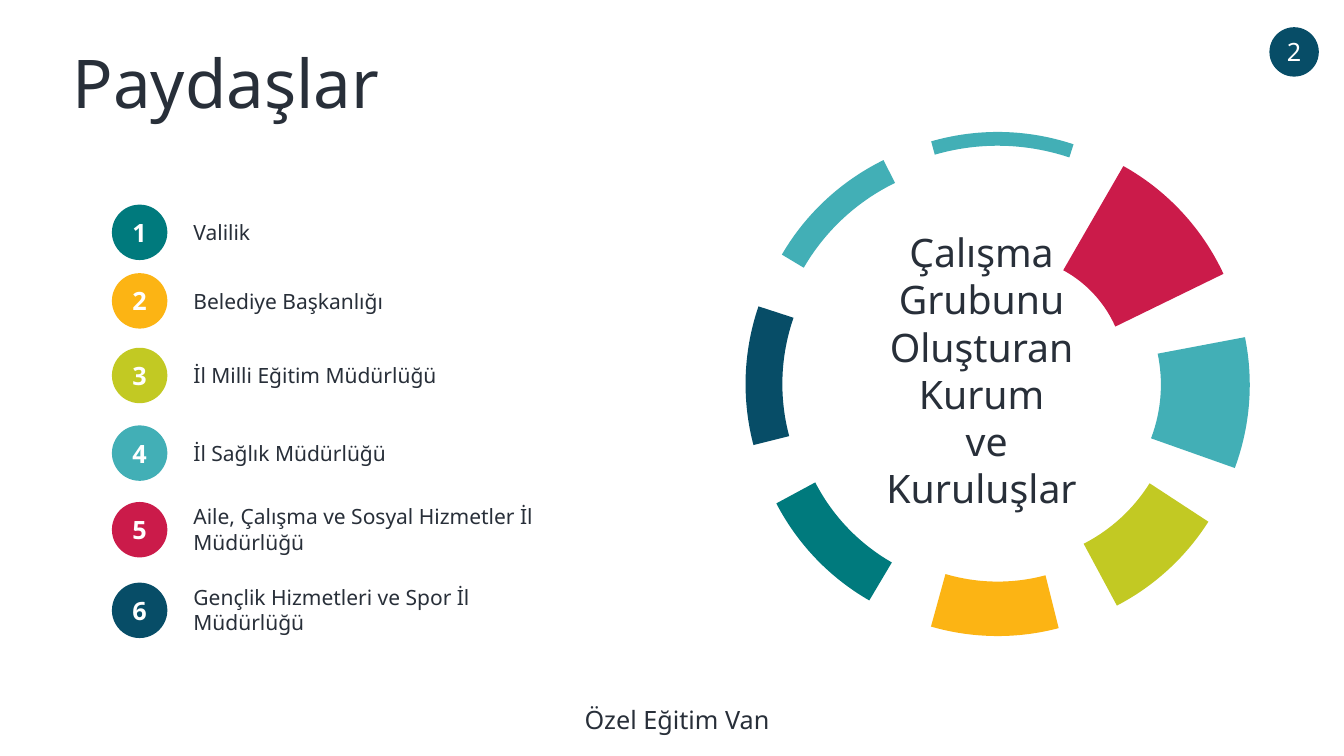
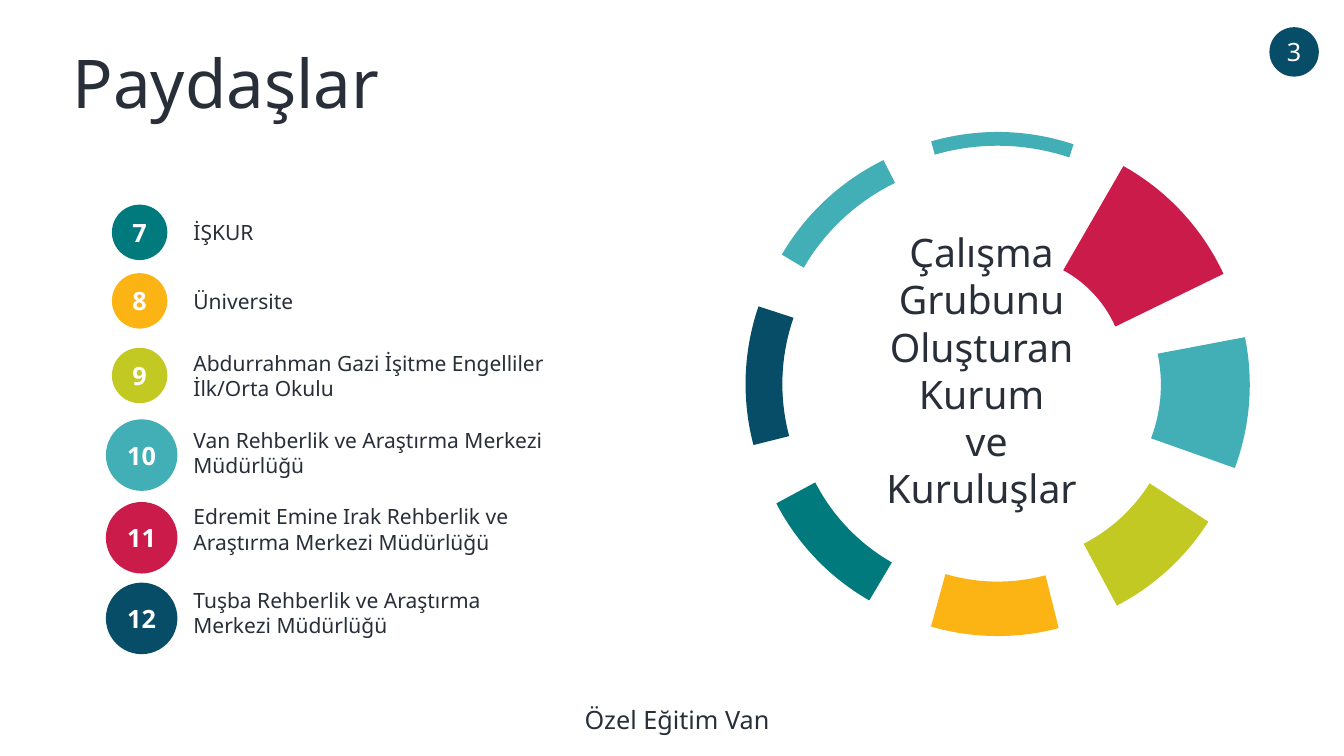
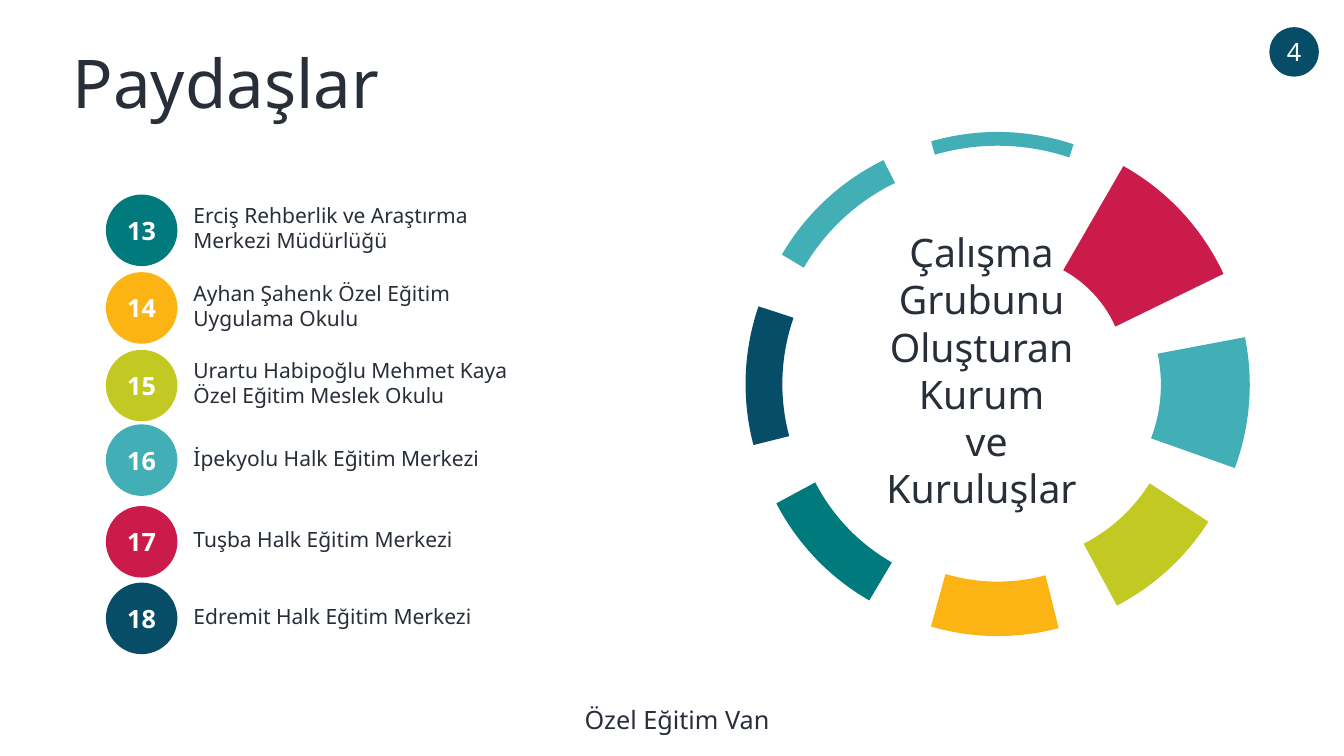
from pptx import Presentation
from pptx.dml.color import RGBColor
from pptx.enum import shapes, text
from pptx.util import Inches, Pt

FONT = "Noto Sans"
INK = RGBColor(0x28, 0x2F, 0x39)
WHITE = RGBColor(0xFF, 0xFF, 0xFF)
NAVY = RGBColor(0x07, 0x4D, 0x67)
TEAL = RGBColor(0x00, 0x7A, 0x7D)
AMBER = RGBColor(0xFC, 0xB4, 0x14)
LIME = RGBColor(0xC2, 0xC9, 0x23)
AQUA = RGBColor(0x42, 0xAF, 0xB6)
CRIMSON = RGBColor(0xCB, 0x1B, 0x4A)
ROW_COLORS = [TEAL, AMBER, LIME, AQUA, CRIMSON, NAVY]

TITLE = "Paydaşlar"
FOOTER = "Özel Eğitim Van"
RING_TEXT = "Çalışma Grubunu Oluşturan Kurum\n ve Kuruluşlar"

# Ring segments: rotation, start angle, end angle (degrees), thickness, colour
SEGMENTS = [
    (0, 254.69, 287.57, 0.028, AQUA),
    (315, 255.97, 287.99, 0.052, AQUA),
    (270, 255.97, 288, 0.075, NAVY),
    (224.7, 255.97, 286.96, 0.09, TEAL),
    (180, 255.97, 285.37, 0.111, AMBER),
    (137.2, 255.97, 284.53, 0.143, LIME),
    (93.3, 255.97, 286.22, 0.181, AQUA),
    (44, 255.97, 289.99, 0.245, CRIMSON),
]
ANGLE_UNIT = 0.6  # one degree, as an adjustment value

# Stakeholders on each slide: badge top, label top, label
STAKEHOLDERS = [
    [
        (2.03, 2.13, "Valilik"),
        (2.71, 2.81, "Belediye Başkanlığı"),
        (3.45, 3.55, "İl Milli Eğitim Müdürlüğü"),
        (4.22, 4.32, "İl Sağlık Müdürlüğü"),
        (4.98, 4.95, "Aile, Çalışma ve Sosyal Hizmetler İl Müdürlüğü"),
        (5.78, 5.75, "Gençlik Hizmetleri ve Spor İl Müdürlüğü"),
    ],
    [
        (2.03, 2.13, "İŞKUR"),
        (2.71, 2.81, "Üniversite"),
        (3.45, 3.43, "Abdurrahman Gazi İşitme Engelliler İlk/Orta Okulu"),
        (4.16, 4.19, "Van Rehberlik ve Araştırma Merkezi Müdürlüğü"),
        (4.98, 4.95, "Edremit Emine Irak Rehberlik ve Araştırma Merkezi Müdürlüğü"),
        (5.78, 5.78, "Tuşba Rehberlik ve Araştırma Merkezi Müdürlüğü"),
    ],
    [
        (1.93, 1.96, "Erciş Rehberlik ve Araştırma Merkezi Müdürlüğü"),
        (2.7, 2.73, "Ayhan Şahenk Özel Eğitim Uygulama Okulu"),
        (3.47, 3.5, "Urartu Habipoğlu Mehmet Kaya Özel Eğitim Meslek Okulu"),
        (4.21, 4.37, "İpekyolu Halk Eğitim Merkezi"),
        (5.02, 5.17, "Tuşba Halk Eğitim Merkezi"),
        (5.78, 5.94, "Edremit Halk Eğitim Merkezi"),
    ],
]


def write(shape, words, size, color=INK, bold=False, align=text.PP_ALIGN.LEFT):
    """Put text in a shape and format every run."""
    frame = shape.text_frame
    frame.text = words
    for para in frame.paragraphs:
        para.alignment = align
        for span in para.runs:
            span.font.name = FONT
            span.font.size = Pt(size)
            span.font.bold = bold
            span.font.color.rgb = color


def fit_frame(shape):
    frame = shape.text_frame
    frame.word_wrap = True
    frame.auto_size = text.MSO_AUTO_SIZE.SHAPE_TO_FIT_TEXT
    frame.vertical_anchor = text.MSO_ANCHOR.TOP


def add_label(page, left, top, width, height, words, size, align=text.PP_ALIGN.LEFT):
    box = page.shapes.add_textbox(Inches(left), Inches(top), Inches(width), Inches(height))
    fit_frame(box)
    write(box, words, size, align=align)


def add_filled(page, kind, left, top, width, height, color):
    shape = page.shapes.add_shape(
        kind, Inches(left), Inches(top), Inches(width), Inches(height))
    shape.shadow.inherit = False
    shape.fill.solid()
    shape.fill.fore_color.rgb = color
    shape.line.fill.background()
    return shape


def add_badge(page, left, top, size, color, number, bold=True):
    badge = add_filled(page, shapes.MSO_SHAPE.OVAL, left, top, size, size, color)
    badge.text_frame.word_wrap = False
    badge.text_frame.vertical_anchor = text.MSO_ANCHOR.MIDDLE
    write(badge, str(number), 18, WHITE, bold, text.PP_ALIGN.CENTER)


def add_title(page):
    title = page.shapes.title
    title.left, title.top = Inches(0.62), Inches(0.36)
    title.width, title.height = Inches(11.77), Inches(0.94)
    fit_frame(title)
    write(title, TITLE, 48)


def add_ring(page):
    for rotation, start, end, thickness, color in SEGMENTS:
        arc = add_filled(page, shapes.MSO_SHAPE.BLOCK_ARC, 7.46, 1.31, 4.87, 5, color)
        arc.rotation = rotation
        arc.adjustments[0] = start * ANGLE_UNIT
        arc.adjustments[1] = end * ANGLE_UNIT
        arc.adjustments[2] = thickness
    add_label(page, 8.53, 2.22, 2.41, 2.93, RING_TEXT, 28, text.PP_ALIGN.CENTER)


def add_stakeholders(page, rows, first_number):
    for index, (badge_top, label_top, label) in enumerate(rows):
        number = first_number + index
        left, size = (1.11, 0.55) if number < 10 else (1.05, 0.71)
        add_badge(page, left, badge_top, size, ROW_COLORS[index], number)
        height = 0.61 if len(label) > 30 else 0.35
        add_label(page, 1.82, label_top, 3.72, height, label, 15)


def main():
    deck = Presentation()
    deck.slide_width, deck.slide_height = Inches(13.33), Inches(7.5)
    title_only = deck.slide_layouts[5]

    for index, rows in enumerate(STAKEHOLDERS):
        page = deck.slides.add_slide(title_only)
        # Shared frame: title, footer and page number
        add_title(page)
        add_label(page, 0.5, 6.94, 12.43, 0.4, FOOTER, 18, text.PP_ALIGN.CENTER)
        add_badge(page, 12.59, 0.27, 0.49, NAVY, index + 2, bold=False)
        # Content: ring and numbered list
        add_ring(page)
        add_stakeholders(page, rows, index * len(ROW_COLORS) + 1)

    deck.save("out.pptx")


if __name__ == "__main__":
    main()
